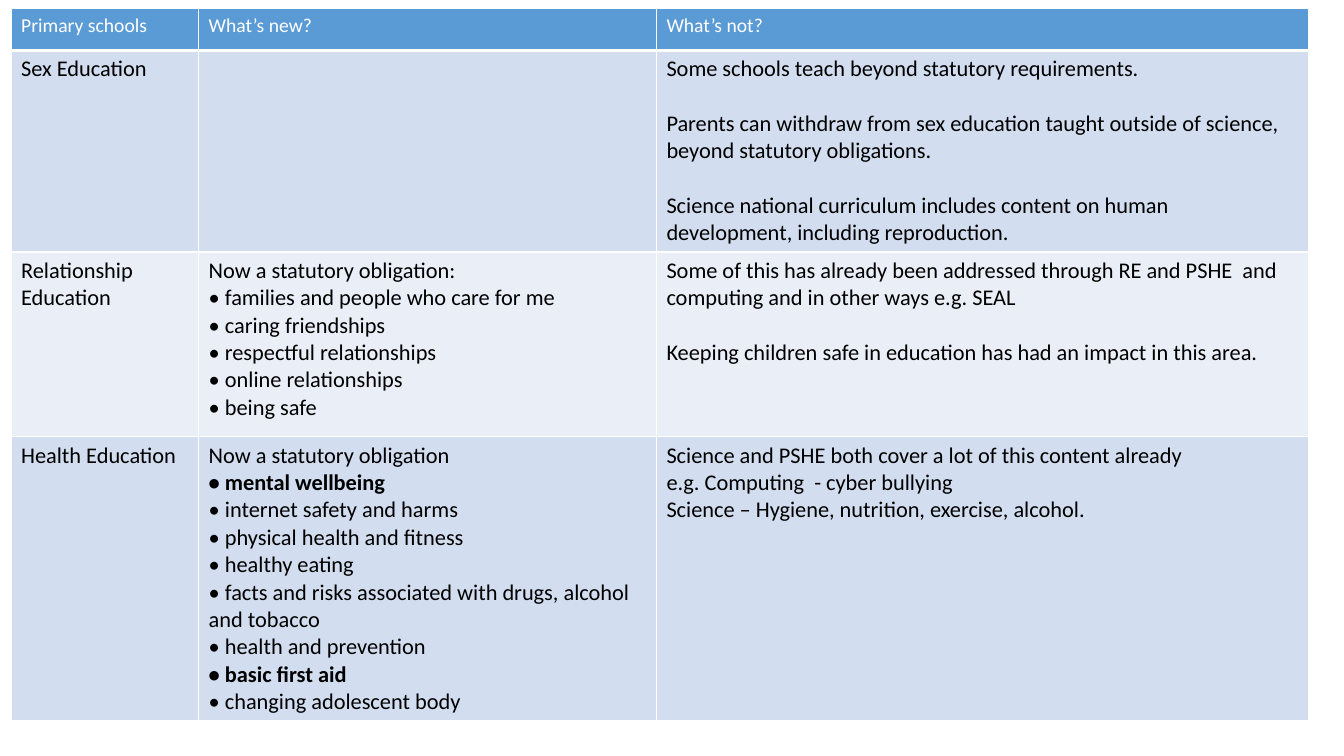
"""Build a slide with a table of changes in primary school education."""
from dataclasses import dataclass

from lxml.etree import SubElement
from pptx import Presentation
from pptx.dml.color import RGBColor
from pptx.oxml.ns import qn
from pptx.util import Pt

HEADS = ["Primary schools", "What’s new?", "What’s not?"]
TOPICS = [
    (["Sex Education"], [], [
        "Some schools teach beyond statutory requirements.",
        "Parents can withdraw from sex education taught outside of science, "
        "beyond statutory obligations.",
        "Science national curriculum includes content on human development, "
        "including reproduction.",
    ]),
    (["Relationship Education"], [
        "Now a statutory obligation:",
        "• families and people who care for me",
        "• caring friendships",
        "• respectful relationships",
        "• online relationships",
        "• being safe",
    ], [
        "Some of this has already been addressed through RE and PSHE  and "
        "computing and in other ways e.g. SEAL",
        "Keeping children safe in education has had an impact in this area.",
    ]),
    (["Health Education"], [
        "Now a statutory obligation",
        "• mental wellbeing",
        "• internet safety and harms",
        "• physical health and fitness",
        "• healthy eating",
        "• facts and risks associated with drugs, alcohol and tobacco",
        "• health and prevention",
        "• basic first aid",
        "• changing adolescent body",
    ], [
        "Science and PSHE both cover a lot of this content already",
        "e.g. Computing  - cyber bullying",
        "Science – Hygiene, nutrition, exercise, alcohol.",
    ]),
]
STRONG = {"• mental wellbeing", "• basic first aid"}
SPACED = {"Sex Education", "Relationship Education"}
WIDTHS = [134, 327, 466]
HEIGHTS = [30, 143.5, 132, 202.5]
LEFT, TOP = 7.9, 6


@dataclass(frozen=True)
class Theme:
    """Colours, font and sizes of the slide."""
    font: str = "Calibri"
    head: str = "5B9BD5"
    bands: tuple = ("D2DEEF", "EAEFF7")
    light: str = "FFFFFF"
    dark: str = "000000"
    small: float = 14
    body: float = 16
    gap: float = 19.5
    thin: float = 1
    thick: float = 3


THEME = Theme()


def write(frame, lines, size, color, gap=0):
    """Write lines as paragraphs with the given format."""
    for num, line in enumerate(lines):
        para = frame.add_paragraph() if num else frame.paragraphs[0]
        para.space_before = Pt(gap if num else 0)
        run = para.add_run()
        run.text = line
        font = run.font
        font.name, font.size, font.bold = THEME.font, Pt(size), line in STRONG
        font.color.rgb = RGBColor.from_string(color)


def style(cell, fill, top, bottom):
    """Set the borders and the fill of a cell."""
    props = cell._tc.get_or_add_tcPr()
    sides = {"L": THEME.thin, "R": THEME.thin, "T": top, "B": bottom}
    for side, width in sides.items():
        line = SubElement(props, qn(f"a:ln{side}"), w=str(Pt(width)))
        solid = SubElement(line, qn("a:solidFill"))
        SubElement(solid, qn("a:srgbClr"), val=THEME.light)
    cell.fill.solid()
    cell.fill.fore_color.rgb = RGBColor.from_string(fill)


def main():
    """Build the slide and save it."""
    deck = Presentation()
    deck.slide_width, deck.slide_height = Pt(960), Pt(540)
    slide = deck.slides.add_slide(deck.slide_layouts[6])
    rows = [[[head] for head in HEADS], *TOPICS]
    table = slide.shapes.add_table(
        len(rows), len(WIDTHS), Pt(LEFT), Pt(TOP),
        Pt(sum(WIDTHS)), Pt(sum(HEIGHTS))).table
    for col, width in zip(table.columns, WIDTHS):
        col.width = Pt(width)
    for num, row in enumerate(rows):
        table.rows[num].height = Pt(HEIGHTS[num])
        fill = THEME.bands[(num - 1) % 2] if num else THEME.head
        size = THEME.body if num else THEME.small
        color = THEME.dark if num else THEME.light
        gap = THEME.gap if row[0][0] in SPACED else 0
        top = THEME.thick if num == 1 else THEME.thin
        bottom = THEME.thin if num else THEME.thick
        for pos, lines in enumerate(row):
            cell = table.cell(num, pos)
            style(cell, fill, top, bottom)
            write(cell.text_frame, lines, size, color,
                  gap=gap if pos == 2 else 0)
    deck.save("out.pptx")


if __name__ == "__main__":
    main()
